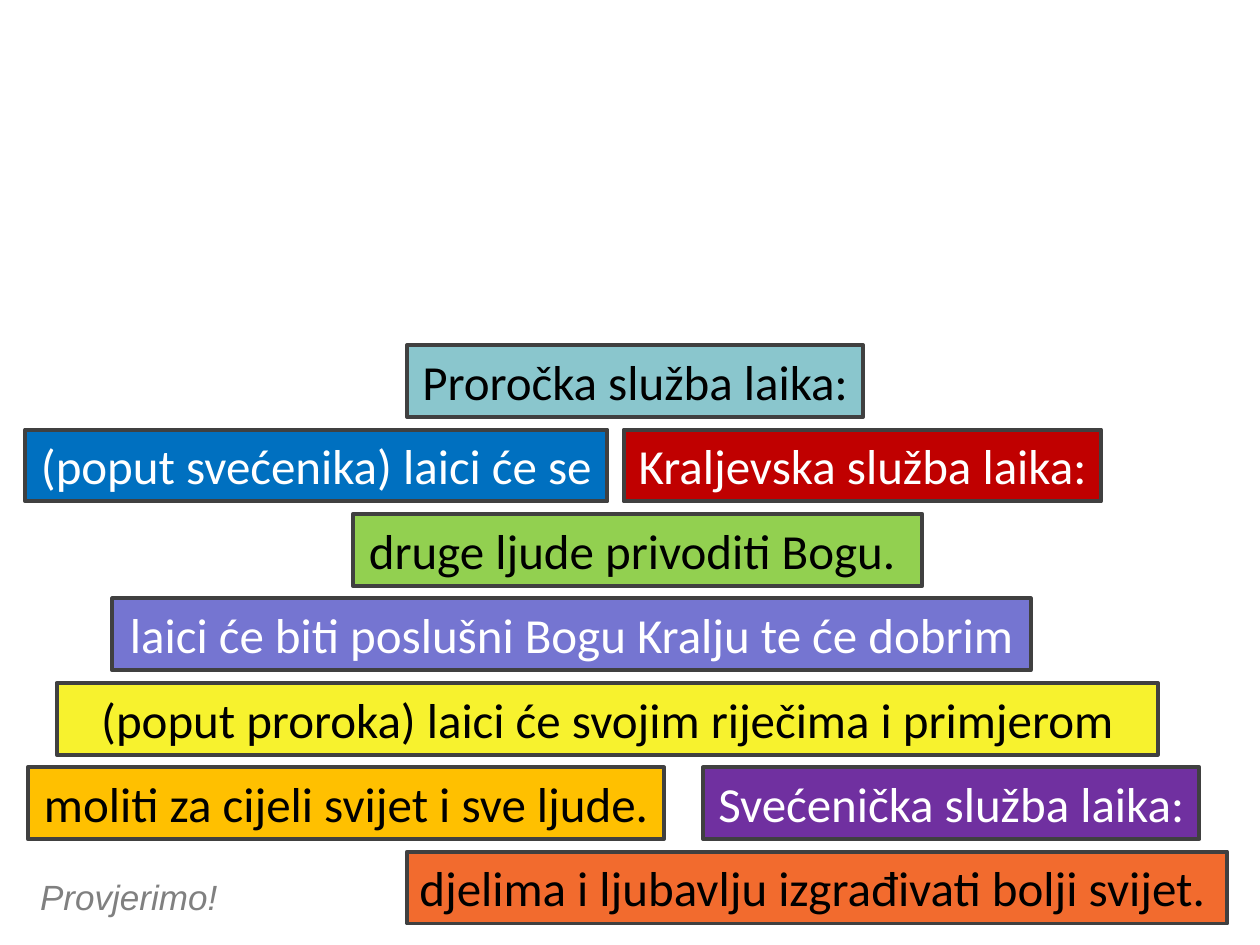
from pptx import Presentation
from pptx import util as u
from pptx.dml.color import RGBColor
from pptx.enum import shapes, text


def color(value):
    return RGBColor.from_string(value)


def write(box, words, font="Calibri", size=28, ink="000000", italic=None,
          align=text.PP_ALIGN.CENTER, wrap=False):
    frame = box.text_frame
    frame.word_wrap = wrap
    frame.auto_size = text.MSO_AUTO_SIZE.SHAPE_TO_FIT_TEXT
    frame.vertical_anchor = text.MSO_ANCHOR.TOP
    para = frame.paragraphs[0]
    para.alignment = align
    span = para.add_run()
    span.text = words
    span.font.name = font
    span.font.size = u.Pt(size)
    span.font.italic = italic
    span.font.color.rgb = color(ink)


deck = Presentation()
deck.slide_width = u.Inches(10)
deck.slide_height = u.Inches(7.5)
page = deck.slides.add_slide(deck.slide_layouts[6])

BLACK, WHITE = "000000", "FFFFFF"
CENTER, LEFT = text.PP_ALIGN.CENTER, text.PP_ALIGN.LEFT
FIRST_ROW, ROW_PITCH, CARD_HEIGHT = 2.74, 0.67, 0.57

cards = [
    (5, 5.58, 3.94, "7030A0", WHITE, CENTER, False, "Svećenička služba laika:"),
    (1, 4.95, 3.79, "C00000", WHITE, CENTER, False, "Kraljevska služba laika:"),
    (0, 3.23, 3.62, "8AC6CD", BLACK, CENTER, False, "Proročka služba laika:"),
    (4, 0.45, 8.74, "F7F22E", BLACK, CENTER, True,
     "(poput proroka) laici će svojim riječima i primjerom"),
    (1, 0.2, 4.62, "0070C0", WHITE, CENTER, False, "(poput svećenika) laici će se"),
    (3, 0.89, 7.29, "7575D1", WHITE, CENTER, False,
     "laici će biti poslušni Bogu Kralju te će dobrim"),
    (5, 0.22, 5.05, "FFC000", BLACK, CENTER, False, "moliti za cijeli svijet i sve ljude."),
    (2, 2.8, 4.52, "92D050", BLACK, CENTER, False, "druge ljude privoditi Bogu. "),
    (6, 3.23, 6.51, "F26B2E", BLACK, LEFT, False,
     "djelima i ljubavlju izgrađivati bolji svijet."),
]

for row, left, width, fill, ink, align, wrap, words in cards:
    card = page.shapes.add_shape(
        shapes.MSO_SHAPE.RECTANGLE, u.Inches(left),
        u.Inches(FIRST_ROW + row * ROW_PITCH), u.Inches(width), u.Inches(CARD_HEIGHT))
    card.shadow.inherit = False
    card.fill.solid()
    card.fill.fore_color.rgb = color(fill)
    card.line.color.rgb = color("404040")
    card.line.width = u.Pt(2.25)
    write(card, words, ink=ink, align=align, wrap=wrap)

prompt = page.shapes.add_textbox(u.Inches(0.22), u.Inches(6.9), u.Inches(2.79), u.Inches(0.44))
write(prompt, "Provjerimo!", font="Arial", size=20, ink="808080", italic=True,
      align=LEFT, wrap=True)

deck.save("out.pptx")
